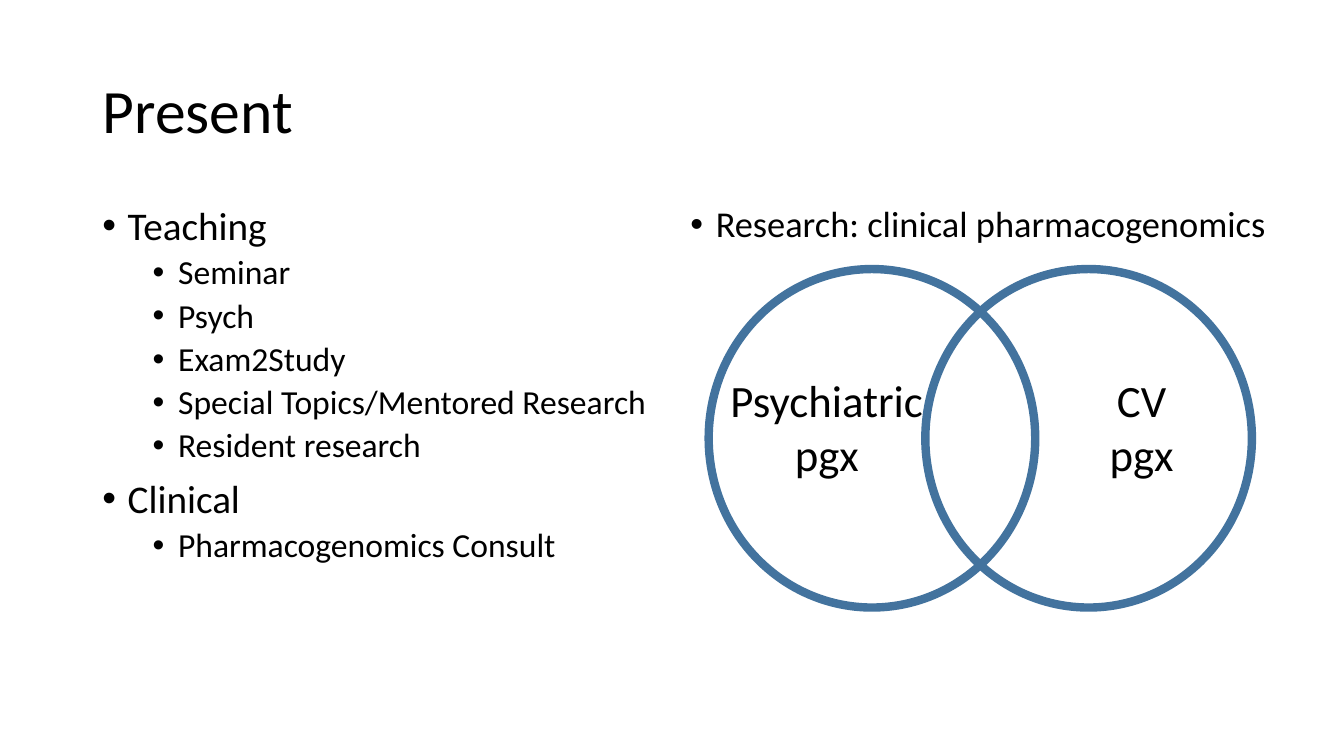
"""Build the "Present" slide: teaching, clinical and research work with a Venn diagram."""
from dataclasses import dataclass

from lxml import etree
from pptx import Presentation
from pptx.dml.color import RGBColor
from pptx.enum.shapes import MSO_SHAPE
from pptx.enum.text import MSO_ANCHOR, MSO_AUTO_SIZE, PP_ALIGN
from pptx.oxml.ns import qn
from pptx.slide import Slide
from pptx.text.text import TextFrame, _Paragraph
from pptx.util import Cm, Pt

BLACK = RGBColor(0x00, 0x00, 0x00)
BLUE = RGBColor(0x43, 0x73, 0x9E)
FONT = "Calibri"
ELLIPSE = MSO_SHAPE.OVAL
LEFT = PP_ALIGN.LEFT
CENTER = PP_ALIGN.CENTER
MIDDLE = MSO_ANCHOR.MIDDLE
GROW = MSO_AUTO_SIZE.SHAPE_TO_FIT_TEXT
BULLET_INDENT = Cm(0.64)
LEVEL_INDENT = Cm(1.27)
LINE_SPACING = 0.9
LABEL_SIZE = 32


@dataclass(frozen=True)
class Area:
    """A rectangle on the slide, in centimetres."""
    left: float
    top: float
    width: float
    height: float


@dataclass(frozen=True)
class Bullet:
    """One bulleted line."""
    text: str
    size: int
    level: int = 0


@dataclass(frozen=True)
class Topic:
    """One circle of the diagram with its label."""
    circle: Area
    label: Area
    lines: tuple[str, ...]
    first_align: PP_ALIGN


TITLE_AREA = Area(2.33, 1.02, 29.21, 3.68)
COLUMNS = (
    (Area(2.33, 5.08, 14.4, 12.09), (
        Bullet("Teaching", 28),
        Bullet("Seminar", 24, 1),
        Bullet("Psych", 24, 1),
        Bullet("Exam2Study", 24, 1),
        Bullet("Special Topics/Mentored Research", 24, 1),
        Bullet("Resident research", 24, 1),
        Bullet("Clinical", 28),
        Bullet("Pharmacogenomics Consult", 24, 1),
    )),
    (Area(17.15, 5.08, 15.6, 13.11), (
        Bullet("Research: clinical pharmacogenomics", 26),
    )),
)
TOPICS = (
    Topic(Area(17.86, 6.78, 8.23, 8.53), Area(18.16, 9.27, 5.66, 3),
          ("Psychiatric", "pgx"), LEFT),
    Topic(Area(23.32, 6.78, 8.23, 8.53), Area(27.69, 9.27, 2.16, 3),
          ("CV", "pgx"), CENTER),
)


def lengths(area: Area) -> tuple[Cm, Cm, Cm, Cm]:
    """Return the area as slide lengths."""
    return Cm(area.left), Cm(area.top), Cm(area.width), Cm(area.height)


def format_spans(para: _Paragraph, size: int) -> None:
    """Set the font of every run in a paragraph."""
    for span in para.runs:
        span.font.name = FONT
        span.font.size = Pt(size)
        span.font.color.rgb = BLACK


def format_bullet(para: _Paragraph, bullet: Bullet) -> None:
    """Set the indent, spacing and bullet sign of a paragraph."""
    para.level = bullet.level
    para.line_spacing = LINE_SPACING
    para.space_before = Pt(5 if bullet.level else 10)
    properties = para._p.get_or_add_pPr()
    properties.set("marL", str(BULLET_INDENT + bullet.level * LEVEL_INDENT))
    properties.set("indent", str(-BULLET_INDENT))
    etree.SubElement(properties, qn("a:buFont")).set("typeface", "Arial")
    etree.SubElement(properties, qn("a:buChar")).set("char", "•")
    format_spans(para, bullet.size)


def add_text(slide: Slide, area: Area, lines: list[str], wrap: bool) -> TextFrame:
    """Add a text box with one paragraph per line."""
    frame = slide.shapes.add_textbox(*lengths(area)).text_frame
    frame.word_wrap = wrap
    frame.text = "\n".join(lines)
    return frame


def set_title(slide: Slide, text: str) -> None:
    """Place and format the title."""
    title = slide.shapes.title
    title.left, title.top, title.width, title.height = lengths(TITLE_AREA)
    frame = title.text_frame
    frame.text = text
    frame.vertical_anchor = MIDDLE
    para = frame.paragraphs[0]
    para.alignment = LEFT
    para.line_spacing = LINE_SPACING
    format_spans(para, 44)


def add_column(slide: Slide, area: Area, bullets: tuple[Bullet, ...]) -> None:
    """Add one bulleted column."""
    frame = add_text(slide, area, [bullet.text for bullet in bullets], True)
    for para, bullet in zip(frame.paragraphs, bullets):
        format_bullet(para, bullet)


def add_circle(slide: Slide, area: Area) -> None:
    """Add one outlined circle."""
    circle = slide.shapes.add_shape(ELLIPSE, *lengths(area))
    circle.shadow.inherit = False
    circle.fill.background()
    circle.line.color.rgb = BLUE
    circle.line.width = Pt(6)


def add_label(slide: Slide, topic: Topic) -> None:
    """Add the label of one circle."""
    frame = add_text(slide, topic.label, list(topic.lines), False)
    frame.auto_size = GROW
    for para in frame.paragraphs:
        para.alignment = CENTER
        format_spans(para, LABEL_SIZE)
    frame.paragraphs[0].alignment = topic.first_align


def main() -> None:
    """Build and save the deck."""
    deck = Presentation()
    deck.slide_width, deck.slide_height = Cm(33.87), Cm(19.05)
    page = deck.slides.add_slide(deck.slide_layouts.get_by_name("Title Only"))
    set_title(page, "Present")
    for area, bullets in COLUMNS:
        add_column(page, area, bullets)
    for topic in TOPICS:
        add_circle(page, topic.circle)
    for topic in TOPICS:
        add_label(page, topic)
    deck.save("out.pptx")


if __name__ == "__main__":
    main()
